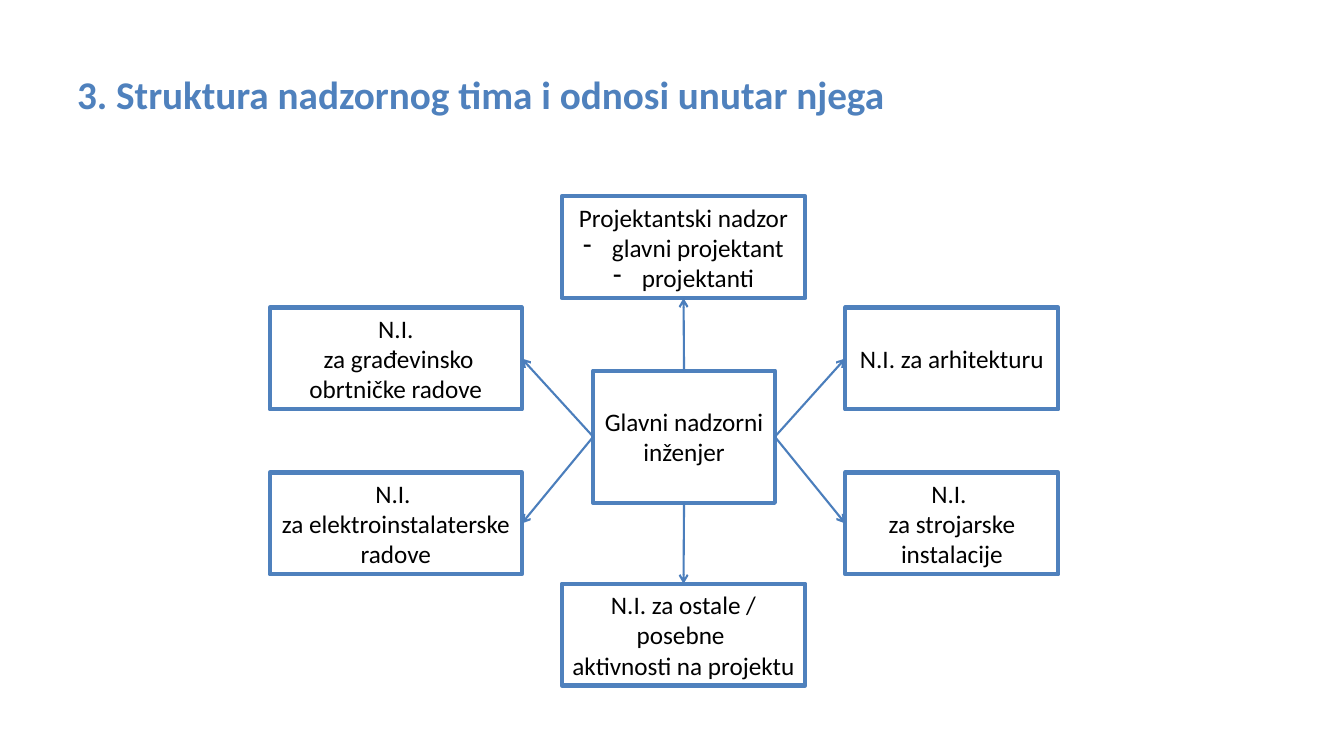
import pptx
import pptx.dml.color
import pptx.enum.shapes
import pptx.enum.text
import pptx.oxml.ns
import pptx.util
from lxml import etree

PX = 9525  # EMU per px at 96 px to the inch
FONT = "Calibri"
BLUE = "4F81BD"
ARROW_BLUE = "4B7EBC"
BLACK = "000000"
BULLET_INDENT = 22

# Connection sites of a rectangle
TOP, LEFT, BOTTOM, RIGHT = range(4)

LEAD = ((308, 166, 173, 126), ["Glavni nadzorni inženjer"])

# Place within the chart, lines, site on the lead box, site on the member box
MEMBERS = [
    ((278, 0, 232, 97),
     ["Projektantski nadzor", "- glavni projektant", "- projektanti"], TOP, BOTTOM),
    ((548, 106, 203, 97), ["N.I. za arhitekturu"], RIGHT, LEFT),
    ((548, 263, 203, 97), ["N.I. ", "za strojarske instalacije"], RIGHT, LEFT),
    ((0, 106, 240, 97), ["N.I.", " za građevinsko obrtničke radove"], LEFT, RIGHT),
    ((0, 263, 240, 97), ["N.I. ", "za elektroinstalaterske radove"], LEFT, RIGHT),
    ((278, 369, 232, 97),
     ["N.I. za ostale / posebne ", "aktivnosti na projektu"], BOTTOM, TOP),
]


def px(*lengths):
    return [pptx.util.Emu(length * PX) for length in lengths]


def color(value):
    return pptx.dml.color.RGBColor.from_string(value)


def add_span(para, text, size, ink, bold=False):
    span = para.add_run()
    span.text = text
    span.font.name = FONT
    span.font.size = pptx.util.Pt(size)
    span.font.bold = bold
    span.font.color.rgb = color(ink)


def add_dash(para):
    """Give the paragraph a hanging dash as its bullet."""
    properties = para._p.get_or_add_pPr()
    properties.set("marL", str(BULLET_INDENT * PX))
    properties.set("indent", str(-BULLET_INDENT * PX))
    bullet = etree.SubElement(properties, pptx.oxml.ns.qn("a:buChar"))
    bullet.set("char", "-")


def add_title(page, left, top, width, height):
    box = page.shapes.add_textbox(*px(left, top, width, height))
    frame = box.text_frame
    frame.word_wrap = True
    frame.vertical_anchor = pptx.enum.text.MSO_ANCHOR.MIDDLE
    add_span(frame.paragraphs[0],
             "3. Struktura nadzornog tima i odnosi unutar njega", 28, BLUE, bold=True)


def add_role(page, left, top, width, height, lines):
    box = page.shapes.add_shape(pptx.enum.shapes.MSO_SHAPE.RECTANGLE,
                                *px(left, top, width, height))
    box.shadow.inherit = False
    box.fill.background()
    box.line.color.rgb = color(BLUE)
    box.line.width = pptx.util.Pt(3)
    frame = box.text_frame
    frame.word_wrap = True
    frame.vertical_anchor = pptx.enum.text.MSO_ANCHOR.MIDDLE
    for number, line in enumerate(lines):
        para = frame.add_paragraph() if number else frame.paragraphs[0]
        para.alignment = pptx.enum.text.PP_ALIGN.CENTER
        if line.startswith("-"):
            add_dash(para)
            line = line[1:]
        add_span(para, line, 18, BLACK)
    return box


def add_arrow(page, start, start_site, end, end_site):
    arrow = page.shapes.add_connector(
        pptx.enum.shapes.MSO_CONNECTOR.STRAIGHT, *px(0, 0, 0, 0))
    arrow.begin_connect(start, start_site)
    arrow.end_connect(end, end_site)
    arrow.line.color.rgb = color(ARROW_BLUE)
    arrow.line.width = pptx.util.Pt(1.5)
    head = etree.SubElement(arrow.line._get_or_add_ln(), pptx.oxml.ns.qn("a:tailEnd"))
    head.set("type", "arrow")
    etree.SubElement(arrow._element.spPr, pptx.oxml.ns.qn("a:effectLst"))


def add_team_chart(page, left, top):
    def place(role_box, lines):
        across, down, width, height = role_box
        return add_role(page, left + across, top + down, width, height, lines)

    lead = place(*LEAD)
    for role_box, lines, lead_site, member_site in MEMBERS:
        member = place(role_box, lines)
        add_arrow(page, lead, lead_site, member, member_site)


def main():
    deck = pptx.Presentation()
    deck.slide_width, deck.slide_height = px(1280, 720)
    page = deck.slides.add_slide(deck.slide_layouts[6])
    add_title(page, 64, 29, 1152, 120)
    add_team_chart(page, 257, 187)
    deck.save("out.pptx")


if __name__ == "__main__":
    main()
